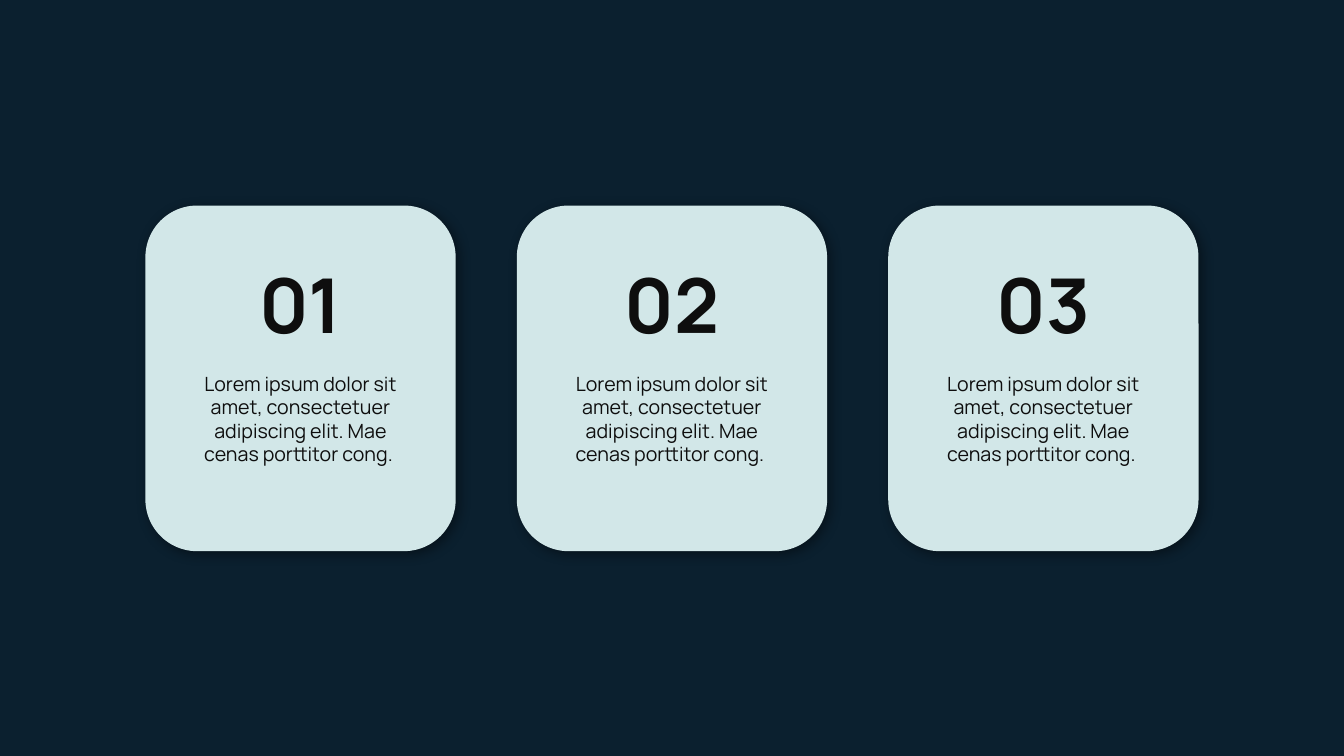
from dataclasses import dataclass

from lxml.etree import SubElement
from pptx import Presentation
from pptx.dml.color import RGBColor
from pptx.enum.shapes import MSO_SHAPE as Preset
from pptx.enum.text import MSO_AUTO_SIZE as AutoSize, PP_ALIGN as Align
from pptx.oxml.ns import qn
from pptx.util import Cm, Pt


@dataclass(frozen=True)
class Theme:
    """Colours, font and type sizes of the slide."""
    background: RGBColor = RGBColor(0x0B, 0x20, 0x2F)
    card: RGBColor = RGBColor(0xD2, 0xE7, 0xE8)
    text: RGBColor = RGBColor(0x0E, 0x0E, 0x0E)
    shadow: str = "000000"
    font: str = "Manrope"
    number_size: int = 54
    body_size: int = 14


THEME = Theme()
SLIDE_WIDTH, SLIDE_HEIGHT = 33.87, 19.05
CARD_WIDTH, CARD_HEIGHT, CARD_TOP, CARD_PITCH = 7.82, 8.71, 5.18, 9.36
BODY = "Lorem ipsum dolor sit amet, consectetuer adipiscing elit. Mae cenas porttitor cong. "
CARDS = [("01", BODY), ("02", BODY), ("03", BODY)]


def add_shadow(shape):
    """Give the shape a soft shadow towards the lower right."""
    shape.shadow.inherit = False
    effects = shape.element.spPr.find(qn("a:effectLst"))
    shadow = SubElement(effects, qn("a:outerShdw"), blurRad=str(Pt(9.1)), dist=str(Pt(3)),
                        dir=str(45 * 60000), algn="tl", rotWithShape="0")
    color = SubElement(shadow, qn("a:srgbClr"), val=THEME.shadow)
    SubElement(color, qn("a:alpha"), val="44000")


def add_text(shapes, text, left, top, width, height, size, bold=False):
    """Add a centred text box, measured in centimetres."""
    box = shapes.add_textbox(Cm(left), Cm(top), Cm(width), Cm(height))
    frame = box.text_frame
    frame.text = text
    frame.word_wrap = True
    frame.auto_size = AutoSize.SHAPE_TO_FIT_TEXT
    paragraph = frame.paragraphs[0]
    paragraph.alignment = Align.CENTER
    font = paragraph.runs[0].font
    font.name, font.size, font.bold = THEME.font, Pt(size), bold
    font.color.rgb = THEME.text


def add_card(slide, number, body, left, top, width, height):
    """Add a grouped card with a number above its body text."""
    shapes = slide.shapes.add_group_shape().shapes
    card = shapes.add_shape(Preset.ROUNDED_RECTANGLE, Cm(left), Cm(top), Cm(width), Cm(height))
    card.fill.solid()
    card.fill.fore_color.rgb = THEME.card
    card.line.fill.background()
    add_shadow(card)
    number_width, body_width = 3.02, 6.05
    add_text(shapes, number, left + (width - number_width) / 2, top + 1.19,
             number_width, 2.57, THEME.number_size, bold=True)
    add_text(shapes, body, left + (width - body_width) / 2, top + 4.06,
             body_width, 2.64, THEME.body_size)


def add_cards_slide(presentation, cards):
    """Add a slide with a horizontally centred row of cards."""
    slide = presentation.slides.add_slide(presentation.slide_layouts[6])
    slide.background.fill.solid()
    slide.background.fill.fore_color.rgb = THEME.background
    row_width = CARD_PITCH * (len(cards) - 1) + CARD_WIDTH
    row_left = (SLIDE_WIDTH - row_width) / 2
    for index, (number, body) in enumerate(cards):
        add_card(slide, number, body, row_left + index * CARD_PITCH, CARD_TOP,
                 CARD_WIDTH, CARD_HEIGHT)


def main():
    """Build and save the presentation."""
    presentation = Presentation()
    presentation.slide_width = Cm(SLIDE_WIDTH)
    presentation.slide_height = Cm(SLIDE_HEIGHT)
    add_cards_slide(presentation, CARDS)
    presentation.save("out.pptx")


if __name__ == "__main__":
    main()
